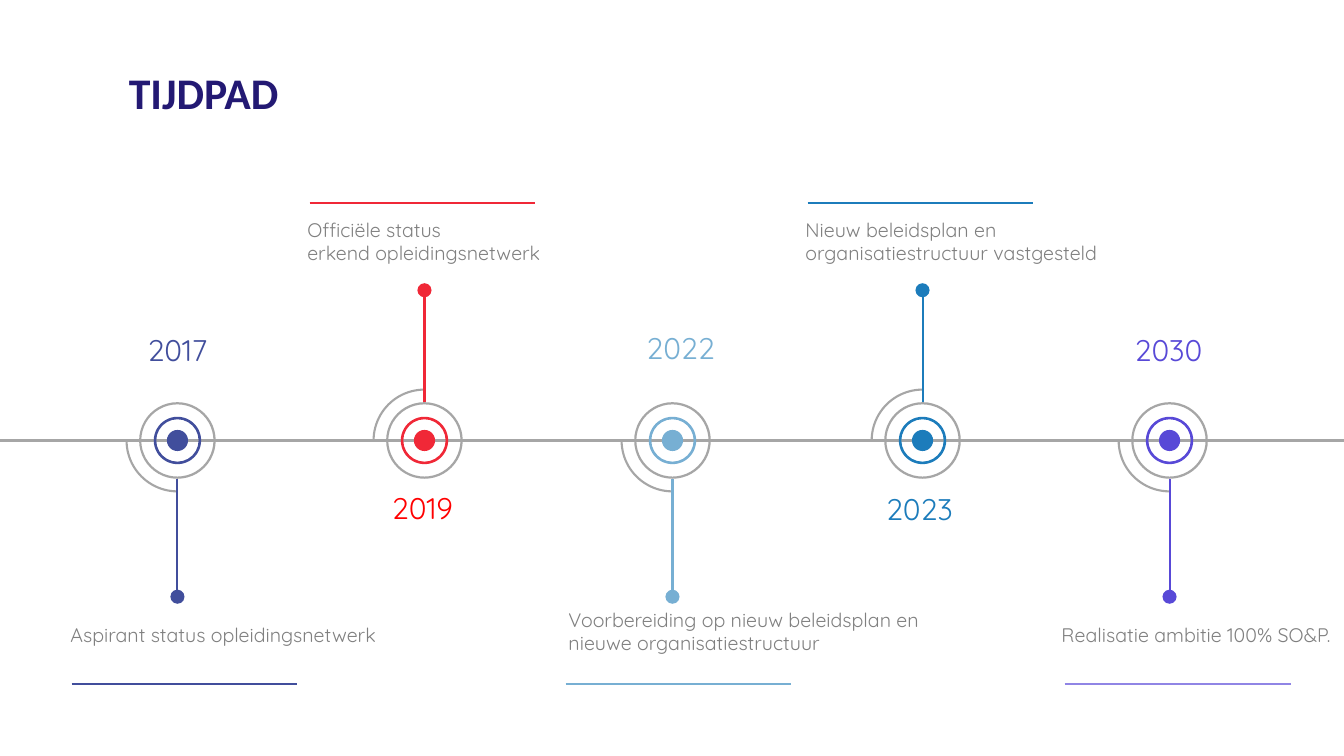
from collections import namedtuple

from lxml import etree
from pptx import Presentation
from pptx.dml.color import RGBColor
from pptx.enum import shapes, text
from pptx.oxml.ns import qn
from pptx.util import Inches, Pt

# Content: x positions and year_y in inches
Milestone = namedtuple(
    "Milestone", "year label above x year_x year_y label_x label_y label_width rule_x colour year_colour rule_colour")
TITLE = "TIJDPAD"
MILESTONES = [
    Milestone("2017", "Aspirant status opleidingsnetwerk", False,
              1.76, 1.76, 3.24, 0.6, 6.13, 3.5, 0.71, "414E9C", "414E9C", "414E9C"),
    Milestone("2019", "Officiële status\nerkend opleidingsnetwerk", True,
              4.21, 4.19, 4.81, 2.95, 2.11, 3.5, 3.07, "F02837", "FF0000", "F02837"),
    Milestone("2022", "Voorbereiding op nieuw beleidsplan en nieuwe organisatiestructuur", False,
              6.67, 6.75, 3.22, 5.54, 5.98, 3.84, 5.61, "77AFD3", "77AFD3", "77AFD3"),
    Milestone("2023", "Nieuw beleidsplan en organisatiestructuur vastgesteld", True,
              9.15, 9.12, 4.82, 7.89, 2.11, 3.5, 8.01, "1C7CBB", "1C7CBB", "1C7CBB"),
    Milestone("2030", "Realisatie ambitie 100% SO&P.", False,
              11.6, 11.59, 3.24, 10.43, 6.13, 3.5, 10.56, "5849D7", "5849D7", "9085E5"),
]

THEME = {
    "title": "231973", "grey": "A6A6A6", "body": "808080",
    "title_font": "Calibri", "body_font": "Quicksand",
    "title_size": 31.2, "year_size": 21.3, "label_size": 14, "line": 1.5,
}
WIDTH, HEIGHT = 13.33, 7.5
AXIS_Y = 4.37
RULE_LENGTH = 2.24
YEAR_WIDTH = 1.85

deck = Presentation()
deck.slide_width, deck.slide_height = Inches(WIDTH), Inches(HEIGHT)
page = deck.slides.add_slide(deck.slide_layouts[6])


def add_line(x1, y1, x2, y2, colour):
    line = page.shapes.add_connector(
        shapes.MSO_CONNECTOR.STRAIGHT, Inches(x1), Inches(y1), Inches(x2), Inches(y2))
    line.line.color.rgb = RGBColor.from_string(colour)
    line.line.width = Pt(THEME["line"])
    etree.SubElement(line._element.spPr, qn("a:effectLst"))


def add_round(kind, x, y, size, colour, adjustments=()):
    """Add a round shape centred on x, y; an arc is outlined, others are filled."""
    shape = page.shapes.add_shape(
        kind, Inches(x - size / 2), Inches(y - size / 2), Inches(size), Inches(size))
    shape.shadow.inherit = False
    for index, value in enumerate(adjustments):
        shape.adjustments[index] = value
    if kind == shapes.MSO_SHAPE.ARC:
        shape.fill.background()
        shape.line.color.rgb = RGBColor.from_string(colour)
        shape.line.width = Pt(THEME["line"])
    else:
        shape.fill.solid()
        shape.fill.fore_color.rgb = RGBColor.from_string(colour)
        shape.line.fill.background()
    return shape


def add_text(words, x, y, width, height, size, colour, font, align=text.PP_ALIGN.LEFT):
    box = page.shapes.add_textbox(Inches(x), Inches(y), Inches(width), Inches(height))
    frame = box.text_frame
    frame.word_wrap = True
    frame.text = words
    for para in frame.paragraphs:
        para.alignment = align
        para.font.size = Pt(size)
        para.font.name = font
        para.font.color.rgb = RGBColor.from_string(colour)
    return frame


# Time axis
add_line(0, AXIS_Y, WIDTH, AXIS_Y, THEME["grey"])

# Milestones
for stone in MILESTONES:
    direction = -1 if stone.above else 1

    # Quarter arc and target rings
    arc = add_round(shapes.MSO_SHAPE.ARC, stone.x, AXIS_Y, 1.01, THEME["grey"], (54, 108))
    arc.rotation = 90 if stone.above else 0
    add_round(shapes.MSO_SHAPE.OVAL, stone.x, AXIS_Y, 0.21, stone.colour)
    add_round(shapes.MSO_SHAPE.DONUT, stone.x, AXIS_Y, 0.47, stone.colour, (0.053,))
    add_round(shapes.MSO_SHAPE.DONUT, stone.x, AXIS_Y, 0.76, THEME["grey"], (0.029,))

    # Stem with its end dot
    stem_end = AXIS_Y + direction * 1.5
    add_line(stone.x, AXIS_Y + direction * 0.38, stone.x, stem_end, stone.colour)
    add_round(shapes.MSO_SHAPE.OVAL, stone.x, AXIS_Y + direction * 1.55 - (0 if direction > 0 else -0.06),
              0.14, stone.colour)

    # Year, description and rule
    add_text(stone.year, stone.year_x - YEAR_WIDTH / 2, stone.year_y, YEAR_WIDTH, 0.46,
             THEME["year_size"], stone.year_colour, THEME["body_font"], text.PP_ALIGN.CENTER)
    add_text(stone.label, stone.label_x, stone.label_y, stone.label_width, 0.57,
             THEME["label_size"], THEME["body"], THEME["body_font"])
    rule_y = 2.01 if stone.above else 6.79
    add_line(stone.rule_x, rule_y, stone.rule_x + RULE_LENGTH, rule_y, stone.rule_colour)

# Title
title = add_text(TITLE, 1.18, 0.58, 7.85, 0.73,
                 THEME["title_size"], THEME["title"], THEME["title_font"])
title.vertical_anchor = text.MSO_ANCHOR.MIDDLE
title.paragraphs[0].line_spacing = 0.9
title.paragraphs[0].font.bold = True

deck.save("out.pptx")
